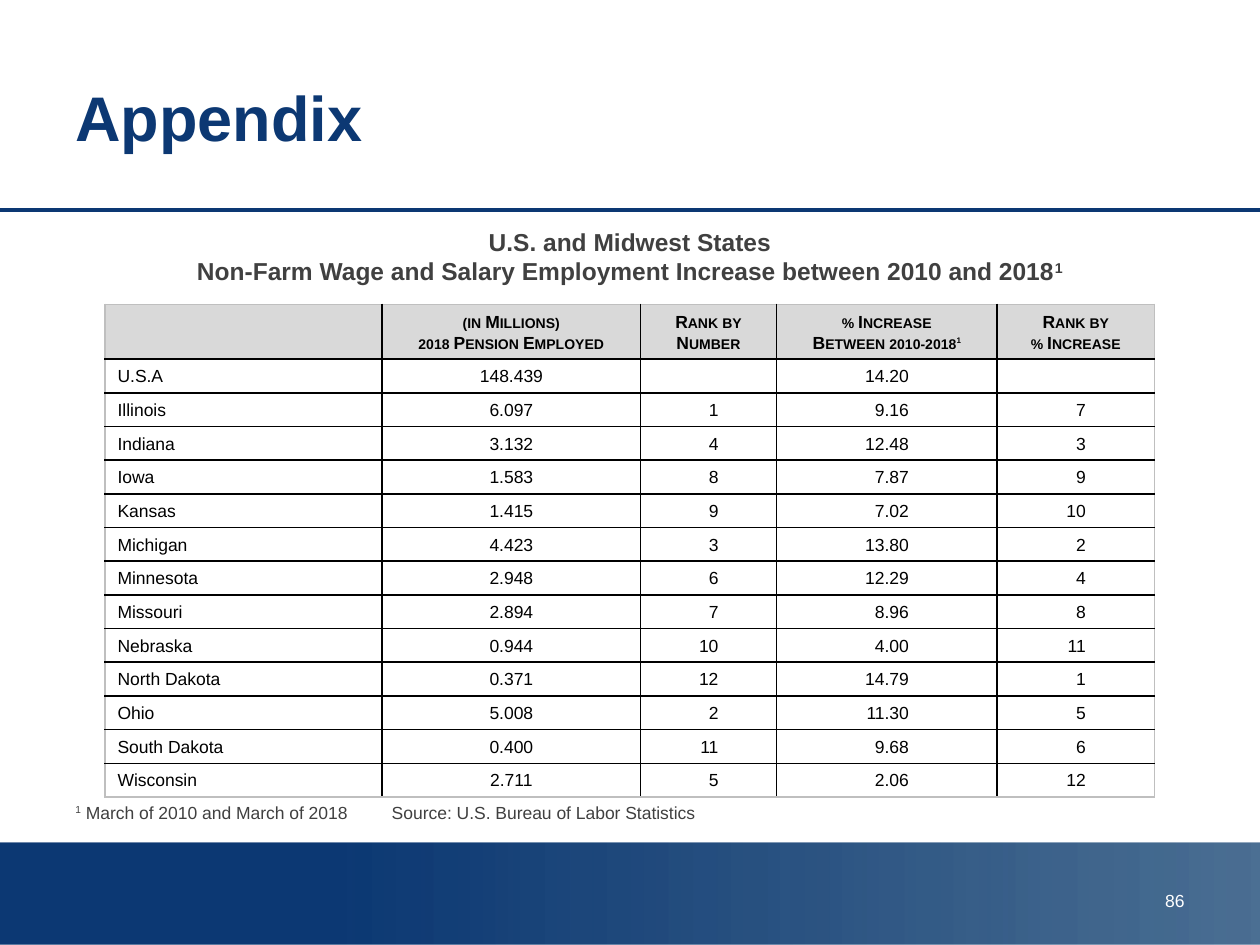
from lxml import etree
from pptx import Presentation
from pptx.dml.color import RGBColor
from pptx.enum.shapes import MSO_CONNECTOR, MSO_SHAPE
from pptx.enum.text import MSO_ANCHOR, PP_ALIGN
from pptx.oxml.ns import qn
from pptx.util import Pt

RECTANGLE = MSO_SHAPE.RECTANGLE
STRAIGHT = MSO_CONNECTOR.STRAIGHT
LEFT, CENTER, RIGHT = PP_ALIGN.LEFT, PP_ALIGN.CENTER, PP_ALIGN.RIGHT
TOP, MIDDLE, BOTTOM = MSO_ANCHOR.TOP, MSO_ANCHOR.MIDDLE, MSO_ANCHOR.BOTTOM

FONT = "Arial"
NAVY, GRAY, BLACK, WHITE = "0C3873", "404040", "000000", "FFFFFF"
HEADER_FILL, FRAME = "D9D9D9", "BFBFBF"

COLUMN_WIDTHS = [158.4, 147.6, 77.8, 126, 90]
HEADER_HEIGHT, ROW_HEIGHT = 31.2, 19.25
ALIGNMENTS = [LEFT, CENTER, RIGHT, RIGHT, RIGHT]
RIGHT_MARGINS = [7.2, 7.2, 33.3, 50.5, 39.4]
HEADERS = [
    [],
    ["(in Millions)\n2018 Pension Employed"],
    ["Rank by Number"],
    ["% Increase\nBetween 2010-2018", "1"],
    ["Rank by\n% Increase"],
]
STATES = [
    ("U.S.A", "148.439", "", "14.20", ""),
    ("Illinois", "6.097", "1", "9.16", "7"),
    ("Indiana", "3.132", "4", "12.48", "3"),
    ("Iowa", "1.583", "8", "7.87", "9"),
    ("Kansas", "1.415", "9", "7.02", "10"),
    ("Michigan", "4.423", "3", "13.80", "2"),
    ("Minnesota", "2.948", "6", "12.29", "4"),
    ("Missouri", "2.894", "7", "8.96", "8"),
    ("Nebraska", "0.944", "10", "4.00", "11"),
    ("North Dakota", "0.371", "12", "14.79", "1"),
    ("Ohio", "5.008", "2", "11.30", "5"),
    ("South Dakota", "0.400", "11", "9.68", "6"),
    ("Wisconsin", "2.711", "5", "2.06", "12"),
]


def color(value):
    return RGBColor.from_string(value)


def add_span(para, text, size, shade, bold=False, raised=False, small_caps=False):
    for index, line in enumerate(text.split("\n")):
        if index:
            para.add_line_break()
        span = para.add_run()
        span.text = line
        span.font.name = FONT
        span.font.size = Pt(size)
        span.font.bold = bold
        span.font.color.rgb = color(shade)
        properties = span.font._element
        if raised:
            properties.set("baseline", "30000")
        if small_caps:
            properties.set("cap", "small")


def add_text_box(page, left, top, width, height, align=LEFT, anchor=TOP):
    box = page.shapes.add_textbox(Pt(left), Pt(top), Pt(width), Pt(height))
    box.text_frame.word_wrap = True
    box.text_frame.vertical_anchor = anchor
    para = box.text_frame.paragraphs[0]
    para.alignment = align
    return para


def add_tab(para, position):
    tabs = etree.SubElement(para._p.get_or_add_pPr(), qn("a:tabLst"))
    etree.SubElement(tabs, qn("a:tab"), pos=str(Pt(position)), algn="l")


def add_footer_band(page):
    band = page.shapes.add_shape(RECTANGLE, 0, Pt(481.5), Pt(721.4), Pt(58.5))
    band.shadow.inherit = False
    band.line.fill.background()
    band.fill.gradient()
    band.fill.gradient_angle = 0
    for stop, position, shade in zip(band.fill.gradient_stops, (0.25, 1), (NAVY, "003366")):
        stop.position = position
        stop.color.rgb = color(shade)
    end_color = band._element.findall(".//" + qn("a:gs"))[-1][0]
    etree.SubElement(end_color, qn("a:alpha"), val="70000")


def add_rule(page, y):
    rule = page.shapes.add_connector(STRAIGHT, 0, Pt(y), Pt(720), Pt(y))
    rule.line.color.rgb = color(NAVY)
    rule.line.width = Pt(2)
    etree.SubElement(rule._element.spPr, qn("a:effectLst"))


def set_borders(cell, shades):
    properties = cell._tc.get_or_add_tcPr()
    for side, shade in zip("LRTB", shades):
        border = etree.SubElement(properties, qn("a:ln" + side), w=str(Pt(1)))
        fill = etree.SubElement(border, qn("a:solidFill"))
        etree.SubElement(fill, qn("a:srgbClr"), val=shade)


def format_cell(cell, align, fill=None):
    cell.vertical_anchor = BOTTOM
    if fill:
        cell.fill.solid()
        cell.fill.fore_color.rgb = color(fill)
    else:
        cell.fill.background()
    para = cell.text_frame.paragraphs[0]
    para.alignment = align
    para.line_spacing = Pt(12)
    etree.SubElement(para._p, qn("a:endParaRPr"), sz="1000")
    return para


def add_employment_table(page):
    row_count, column_count = len(STATES) + 1, len(COLUMN_WIDTHS)
    height = HEADER_HEIGHT + ROW_HEIGHT * len(STATES)
    table = page.shapes.add_table(
        row_count, column_count, Pt(60), Pt(174), Pt(sum(COLUMN_WIDTHS)), Pt(height)
    ).table
    table.first_row = False
    table.horz_banding = False
    for column, width in zip(table.columns, COLUMN_WIDTHS):
        column.width = Pt(width)
    for index, row in enumerate(table.rows):
        row.height = Pt(ROW_HEIGHT if index else HEADER_HEIGHT)
        for number, cell in enumerate(row.cells):
            edges = (number == 0, number == column_count - 1, index == 0, index == row_count - 1)
            set_borders(cell, [FRAME if edge else BLACK for edge in edges])
    for cell, parts in zip(table.rows[0].cells, HEADERS):
        para = format_cell(cell, CENTER, HEADER_FILL)
        for index, text in enumerate(parts):
            add_span(para, text, 10, BLACK, bold=True, raised=index > 0, small_caps=True)
    for index, state in enumerate(STATES, 1):
        cells = table.rows[index].cells
        for cell, text, align, margin in zip(cells, state, ALIGNMENTS, RIGHT_MARGINS):
            para = format_cell(cell, align)
            cell.margin_right = Pt(margin)
            if text:
                add_span(para, text, 10, BLACK)


def main():
    deck = Presentation()
    deck.slide_width, deck.slide_height = Pt(720), Pt(540)
    page = deck.slides.add_slide(deck.slide_layouts[6])

    add_footer_band(page)
    add_rule(page, 120)
    title = add_text_box(page, 36, 21.6, 648, 90, anchor=MIDDLE)
    add_span(title, "Appendix", 36, NAVY, bold=True)
    page_number = add_text_box(page, 516.2, 505, 167.8, 28.8, RIGHT)
    add_span(page_number, "86", 10, WHITE)

    heading = add_text_box(page, 36, 126, 648, 42, CENTER)
    add_span(
        heading,
        "U.S. and Midwest States\n"
        "Non-Farm Wage and Salary Employment Increase between 2010 and 2018",
        14, GRAY, bold=True,
    )
    add_span(heading, "1", 14, GRAY, bold=True, raised=True)

    add_employment_table(page)

    footnote = add_text_box(page, 36, 454.5, 648, 20)
    add_tab(footnote, 180.8)
    add_span(footnote, "1", 10, GRAY, raised=True)
    add_span(
        footnote,
        " March of 2010 and March of 2018\tSource: U.S. Bureau of Labor Statistics",
        10, GRAY,
    )
    deck.save("out.pptx")


if __name__ == "__main__":
    main()
